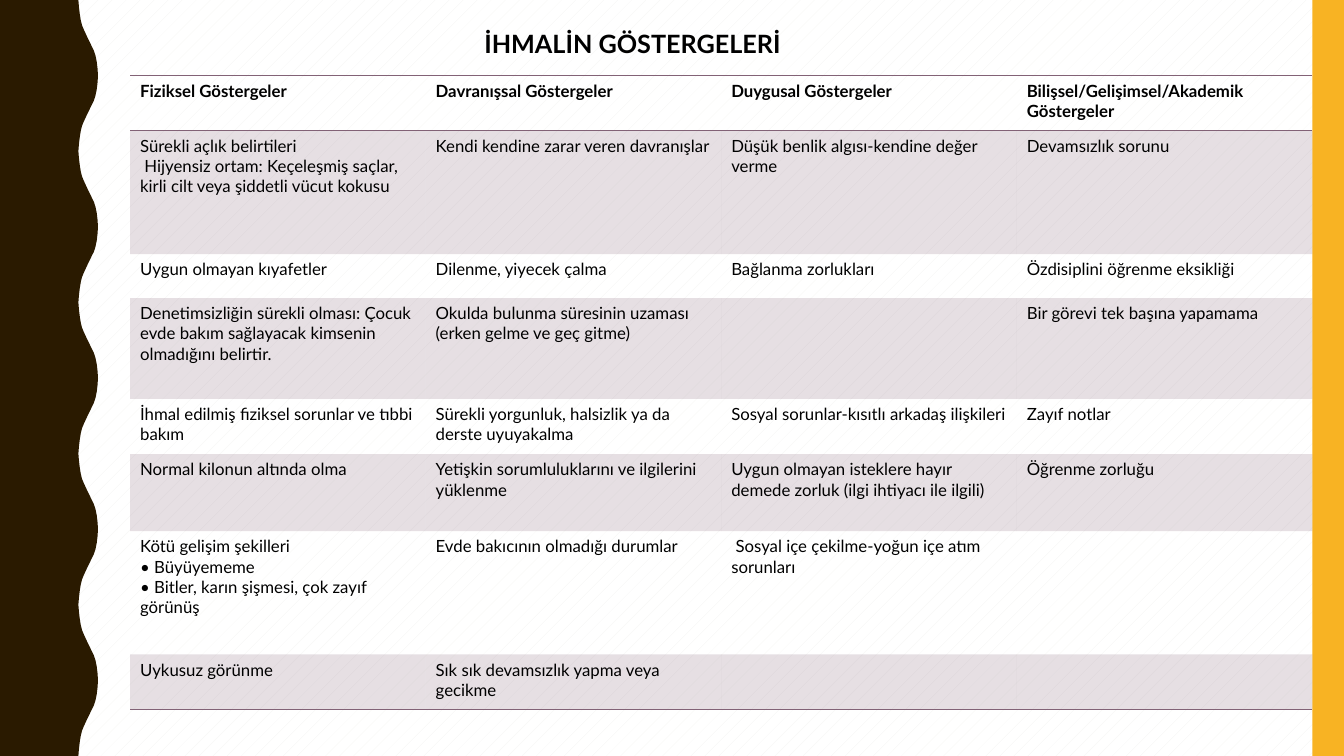
"""Build a slide with a table of the indicators of neglect."""
from lxml import etree
from pptx import Presentation
from pptx.dml.color import RGBColor
from pptx.enum.dml import MSO_PATTERN
from pptx.enum.shapes import MSO_SHAPE
from pptx.enum.text import MSO_ANCHOR, MSO_AUTO_SIZE, PP_ALIGN
from pptx.oxml.ns import qn
from pptx.util import Pt

DOTS = MSO_PATTERN.PERCENT_5
RECTANGLE = MSO_SHAPE.RECTANGLE
TOP = MSO_ANCHOR.TOP
GROW = MSO_AUTO_SIZE.SHAPE_TO_FIT_TEXT
CENTER = PP_ALIGN.CENTER

FONT = "Lato"
NO_STYLE = "{2D5ABB26-0587-4C30-8999-92F81FD0307C}"
WIDTH, HEIGHT = 960, 540
COLORS = {
    "text": "000000",
    "paper": "FFFFFF",
    "dots": "F3F3F2",
    "wave": "2A1A00",
    "stripe": "F8B323",
    "mauve": "826276",
}
HALF_WAVE = [
    (56, 0), (56.4, 5), (57, 10), (57.7, 14.4), (58.6, 18),
    (59.8, 21), (61.2, 24), (62.6, 27), (64.1, 30), (65.5, 33),
    (67, 36), (68.2, 39.6), (69.1, 44), (69.7, 49), (70, 54),
]
WAVE_PERIOD = 108
COLUMN_WIDTH = 211.14
ROW_HEIGHTS = [39.5, 88, 31.5, 72, 39.5, 55, 88, 39.5]
ROWS = [
    ["Fiziksel Göstergeler", "Davranışsal Göstergeler", "Duygusal Göstergeler",
     "Bilişsel/Gelişimsel/Akademik Göstergeler"],
    ["Sürekli açlık belirtileri\n Hijyensiz ortam: Keçeleşmiş saçlar, kirli cilt veya şiddetli vücut kokusu",
     "Kendi kendine zarar veren davranışlar",
     "Düşük benlik algısı-kendine değer verme",
     "Devamsızlık sorunu"],
    ["Uygun olmayan kıyafetler", "Dilenme, yiyecek çalma",
     "Bağlanma zorlukları", "Özdisiplini öğrenme eksikliği"],
    ["Denetimsizliğin sürekli olması: Çocuk evde bakım sağlayacak kimsenin olmadığını belirtir.",
     "Okulda bulunma süresinin uzaması (erken gelme ve geç gitme)",
     "", "Bir görevi tek başına yapamama"],
    ["İhmal edilmiş fiziksel sorunlar ve tıbbi bakım",
     "Sürekli yorgunluk, halsizlik ya da derste uyuyakalma",
     "Sosyal sorunlar-kısıtlı arkadaş ilişkileri", "Zayıf notlar"],
    ["Normal kilonun altında olma",
     "Yetişkin sorumluluklarını ve ilgilerini yüklenme",
     "Uygun olmayan isteklere hayır demede zorluk (ilgi ihtiyacı ile ilgili)",
     "Öğrenme zorluğu"],
    ["Kötü gelişim şekilleri\n• Büyüyememe\n• Bitler, karın şişmesi, çok zayıf görünüş",
     "Evde bakıcının olmadığı durumlar",
     " Sosyal içe çekilme-yoğun içe atım sorunları", ""],
    ["Uykusuz görünme", "Sık sık devamsızlık yapma veya gecikme", "", ""],
]
BORDERS = {0: ["a:lnT", "a:lnB"], len(ROWS) - 1: ["a:lnB"]}


def add_text(paragraph, text, size, bold):
    run = paragraph.add_run()
    run.text = text
    run.font.name = FONT
    run.font.size = Pt(size)
    run.font.bold = bold
    run.font.color.rgb = RGBColor.from_string(COLORS["text"])


def paint(shape, color):
    shape.shadow.inherit = False
    shape.fill.solid()
    shape.fill.fore_color.rgb = RGBColor.from_string(COLORS[color])
    shape.line.fill.background()


presentation = Presentation()
presentation.slide_width = Pt(WIDTH)
presentation.slide_height = Pt(HEIGHT)
slide = presentation.slides.add_slide(presentation.slide_layouts[5])

background = slide.background.fill
background.patterned()
background.pattern = DOTS
background.fore_color.rgb = RGBColor.from_string(COLORS["dots"])
background.back_color.rgb = RGBColor.from_string(COLORS["paper"])

full_wave = HALF_WAVE + [(x, WAVE_PERIOD - y) for x, y in HALF_WAVE[-2::-1]]
edge = [
    (Pt(x), Pt(y + period * WAVE_PERIOD))
    for period in range(HEIGHT // WAVE_PERIOD)
    for x, y in full_wave
]
builder = slide.shapes.build_freeform(0, 0)
builder.add_line_segments(edge + [(0, Pt(HEIGHT))], close=True)
paint(builder.convert_to_shape(), "wave")

stripe = slide.shapes.add_shape(RECTANGLE, Pt(937.5), 0, Pt(22.5), Pt(HEIGHT))
paint(stripe, "stripe")

table = slide.shapes.add_table(
    len(ROWS), len(ROWS[0]), Pt(92.9), Pt(54),
    Pt(COLUMN_WIDTH * len(ROWS[0])), Pt(sum(ROW_HEIGHTS)),
).table
table.horz_banding = False
table._tbl.tblPr.find(qn("a:tableStyleId")).text = NO_STYLE
for column in table.columns:
    column.width = Pt(COLUMN_WIDTH)

for row_index, texts in enumerate(ROWS):
    table.rows[row_index].height = Pt(ROW_HEIGHTS[row_index])
    for column_index, text in enumerate(texts):
        cell = table.cell(row_index, column_index)
        properties = cell._tc.get_or_add_tcPr()
        for side in BORDERS.get(row_index, []):
            border = etree.SubElement(properties, qn(side), w=str(Pt(1)))
            border_fill = etree.SubElement(border, qn("a:solidFill"))
            etree.SubElement(border_fill, qn("a:srgbClr"), val=COLORS["mauve"])
        if row_index % 2:
            cell.fill.solid()
            cell.fill.fore_color.rgb = RGBColor.from_string(COLORS["mauve"])
            color = properties.find(qn("a:solidFill")).find(qn("a:srgbClr"))
            etree.SubElement(color, qn("a:alpha"), val="20000")
        else:
            cell.fill.background()
        frame = cell.text_frame
        for line_index, line in enumerate(text.split("\n") if text else []):
            paragraph = frame.add_paragraph() if line_index else frame.paragraphs[0]
            add_text(paragraph, line, 12, row_index == 0)

title = slide.shapes.title
title.left, title.top = Pt(320.4), Pt(16.6)
title.width, title.height = Pt(262.8), Pt(28.8)
title_frame = title.text_frame
title_frame.word_wrap = True
title_frame.auto_size = GROW
title_frame.vertical_anchor = TOP
title_paragraph = title_frame.paragraphs[0]
title_paragraph.alignment = CENTER
add_text(title_paragraph, "İHMALİN GÖSTERGELERİ", 18, True)

presentation.save("out.pptx")
